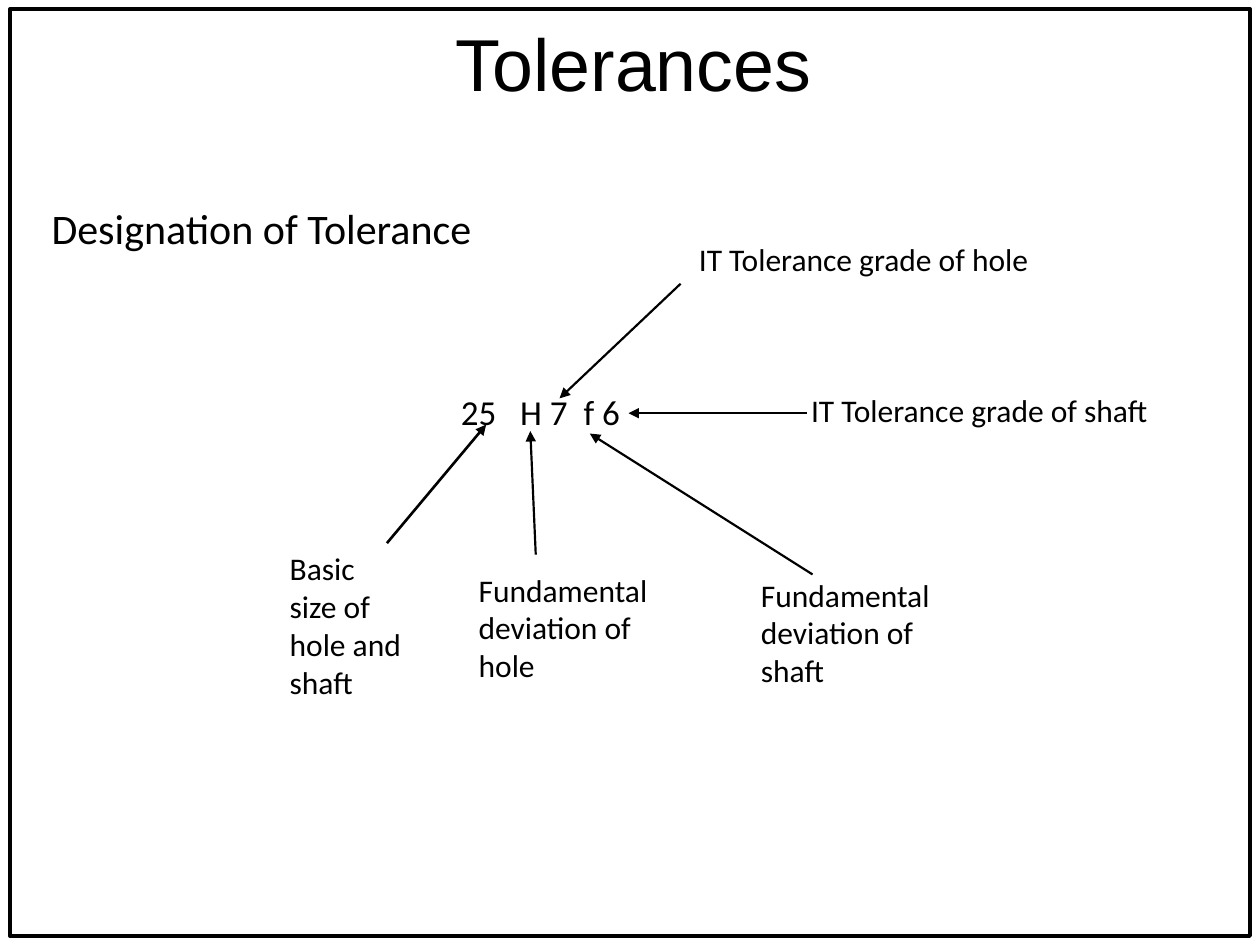
import pptx
import pptx.dml.color
import pptx.enum.shapes
import pptx.enum.text
import pptx.oxml
import pptx.oxml.ns
import pptx.util

Cm = pptx.util.Cm
Pt = pptx.util.Pt
BLACK = "000000"


def color(hex_value):
    return pptx.dml.color.RGBColor.from_string(hex_value)


def add_frame(slide, left, top, width, height):
    frame = slide.shapes.add_shape(
        pptx.enum.shapes.MSO_SHAPE.RECTANGLE, Cm(left), Cm(top), Cm(width), Cm(height))
    frame.shadow.inherit = False
    frame.fill.background()
    frame.line.color.rgb = color(BLACK)
    frame.line.width = Pt(2)


def add_text(slide, box, parts, size, font="Calibri", centered=False, wrap=True):
    """Add one paragraph; each part is a (text, letter spacing in points) pair."""
    caption = slide.shapes.add_textbox(*(Cm(length) for length in box))
    caption.text_frame.word_wrap = wrap
    paragraph = caption.text_frame.paragraphs[0]
    if centered:
        paragraph.alignment = pptx.enum.text.PP_ALIGN.CENTER
    for text, spacing in parts:
        run = paragraph.add_run()
        run.text = text
        run.font.name = font
        run.font.size = Pt(size)
        run.font.color.rgb = color(BLACK)
        if spacing:
            run.font._element.set("spc", str(int(spacing * 100)))


def add_arrow(slide, start, end, width):
    arrow = slide.shapes.add_connector(
        pptx.enum.shapes.MSO_CONNECTOR.STRAIGHT, *(Cm(length) for length in start + end))
    arrow.line.color.rgb = color(BLACK)
    arrow.line.width = Pt(width)
    namespace = pptx.oxml.ns.nsdecls("a")
    arrow.line._get_or_add_ln().append(
        pptx.oxml.parse_xml(f'<a:tailEnd {namespace} type="triangle"/>'))
    arrow._element.spPr.append(pptx.oxml.parse_xml(f"<a:effectLst {namespace}/>"))


def main():
    presentation = pptx.Presentation()
    presentation.slide_width = Cm(25.4)
    presentation.slide_height = Cm(19.05)
    slide = presentation.slides.add_slide(presentation.slide_layouts[6])

    add_frame(slide, 0.2, 0.18, 25, 18.69)
    add_text(slide, (0.79, 3.96, 16.41, 1.27), [("Designation of Tolerance", 0)], 24)
    fit_code = [("25", 0), (" ", 9), ("H 7", 0), (" ", 4.5), ("f 6", 0)]
    add_text(slide, (5.79, 7.75, 10.21, 1.12), fit_code, 20, centered=True)

    callouts = [
        ("Basic size of hole and shaft", (5.59, 10.95, 2.79, 3.33),
         (7.8, 10.95), (9.8, 8.56), 1.5),
        ("Fundamental deviation of hole", (9.4, 11.38, 4.19, 2.57),
         (10.8, 11.18), (10.69, 8.69), 1.25),
        ("IT Tolerance grade of hole", (13.84, 4.72, 8.61, 1.02),
         (13.72, 5.72), (11.28, 8.03), 1.25),
        ("Fundamental deviation of shaft", (15.09, 11.48, 4.19, 2.57),
         (16.38, 11.58), (11.89, 8.74), 1.25),
        ("IT Tolerance grade of shaft", (16.1, 7.75, 8.61, 1.02),
         (16.26, 8.33), (12.67, 8.33), 1.25),
    ]
    for meaning, box, start, end, width in callouts:
        add_arrow(slide, start, end, width)
        add_text(slide, box, [(meaning, 0)], 18)

    add_text(slide, (8.94, 0.23, 7.75, 2.06), [("Tolerances", 0)], 42, font="Arial", wrap=False)
    presentation.save("out.pptx")


if __name__ == "__main__":
    main()
